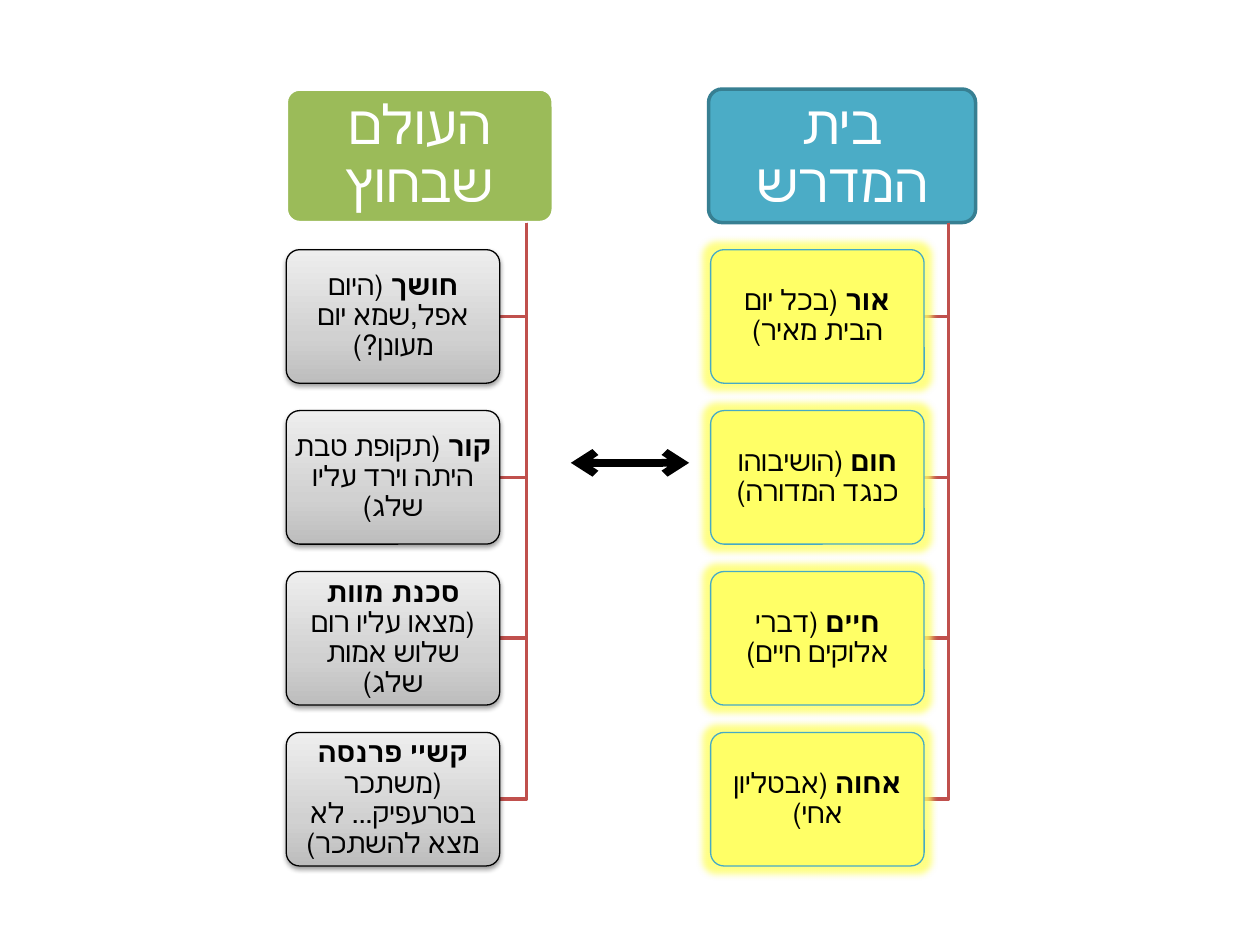
from lxml import etree
from pptx import Presentation
from pptx.dml.color import RGBColor
from pptx.enum.lang import MSO_LANGUAGE_ID
from pptx.enum.shapes import MSO_CONNECTOR, MSO_SHAPE
from pptx.enum.text import MSO_ANCHOR, PP_ALIGN
from pptx.oxml.ns import qn
from pptx.util import Pt

ROUNDED = MSO_SHAPE.ROUNDED_RECTANGLE
STRAIGHT = MSO_CONNECTOR.STRAIGHT
MIDDLE = MSO_ANCHOR.MIDDLE
CENTER = PP_ALIGN.CENTER
HEBREW = MSO_LANGUAGE_ID.HEBREW

BLACK = RGBColor(0x00, 0x00, 0x00)
WHITE = RGBColor(0xFF, 0xFF, 0xFF)
TEAL = RGBColor(0x4B, 0xAC, 0xC6)
DARK_TEAL = RGBColor(0x37, 0x7F, 0x92)
ITEM_TEAL = RGBColor(0x46, 0xAA, 0xC5)
GREEN = RGBColor(0x9B, 0xBB, 0x59)
YELLOW = RGBColor(0xFF, 0xFF, 0x66)
RED = RGBColor(0xC0, 0x50, 0x4D)
GRAYS = (
    (0, RGBColor(0xBD, 0xBD, 0xBD)),
    (35, RGBColor(0xD1, 0xD1, 0xD1)),
    (100, RGBColor(0xEE, 0xEE, 0xEE)),
)

GLOW = ("a:glow", {"rad": Pt(8)}, YELLOW, 80)
SHADOW = (
    "a:outerShdw",
    {"blurRad": Pt(3.1), "dist": Pt(1.6), "dir": 5400000, "rotWithShape": 0},
    BLACK,
    38,
)

HEADER_TOP, HEADER_W, BOX_H = 50.9, 152.6, 76.3
ITEM_TOP, ITEM_W, ITEM_STEP = 142.7, 122, 91.95

COLUMNS = (
    {
        "title": "בית המדרש",
        "header_left": 404.9, "item_left": 406.1, "trunk": 542.1,
        "header": {"fill": TEAL, "line": DARK_TEAL, "width": 2},
        "item": {"fill": YELLOW, "line": ITEM_TEAL, "width": 0.75, "effect": GLOW},
        "items": (
            ("אור", " (בכל יום הבית מאיר)"),
            ("חום", " (הושיבוהו כנגד המדורה)"),
            ("חיים", " (דברי אלוקים חיים)"),
            ("אחוה", " (אבטליון אחי)"),
        ),
    },
    {
        "title": "העולם שבחוץ",
        "header_left": 163.6, "item_left": 163.6, "trunk": 300.9,
        "header": {"fill": GREEN, "line": WHITE, "width": 2},
        "item": {"fill": GRAYS, "line": BLACK, "width": 0.75, "effect": SHADOW},
        "items": (
            ("חושך", " (היום אפל,שמא יום מעונן?)"),
            ("קור", " (תקופת טבת היתה וירד עליו שלג)"),
            ("סכנת מוות ", "(מצאו עליו רום שלוש אמות שלג)"),
            ("קשיי פרנסה ", "(משתכר בטרעפיק... לא מצא להשתכר)"),
        ),
    },
)


def add_xml(parent, tag, values):
    return etree.SubElement(parent, qn(tag), {k: str(v) for k, v in values.items()})


def set_all(target, values):
    for name, value in values.items():
        setattr(target, name, value)


class Deck:
    font = "Calibri"

    def __init__(self, width, height):
        self.prs = Presentation()
        set_all(self.prs, {"slide_width": Pt(width), "slide_height": Pt(height)})
        self.s = self.prs.slides.add_slide(self.prs.slide_layouts[6])

    def outline(self, sp, color, width):
        sp.line.color.rgb = color
        sp.line.width = Pt(width)

    def paint(self, sp, fill):
        if isinstance(fill, RGBColor):
            sp.fill.solid()
            sp.fill.fore_color.rgb = fill
            return
        sp.fill.gradient()
        sp.fill.gradient_angle = 90
        stops = sp._element.spPr.find(".//" + qn("a:gsLst"))
        for stop in list(stops):
            stops.remove(stop)
        for pos, color in fill:
            stop = add_xml(stops, "a:gs", {"pos": pos * 1000})
            add_xml(stop, "a:srgbClr", {"val": color})

    def effect(self, sp, tag, values, color, alpha):
        effects = sp._element.spPr.find(qn("a:effectLst"))
        clr = add_xml(add_xml(effects, tag, values), "a:srgbClr", {"val": color})
        add_xml(clr, "a:alpha", {"val": alpha * 1000})

    def text(self, sp, runs, size, color, inset):
        tf = sp.text_frame
        set_all(tf, {
            "word_wrap": True, "vertical_anchor": MIDDLE,
            "margin_left": Pt(inset), "margin_right": Pt(inset),
            "margin_top": Pt(inset * 2 / 3), "margin_bottom": Pt(inset * 2 / 3),
        })
        p = tf.paragraphs[0]
        set_all(p, {"alignment": CENTER, "line_spacing": 0.9})
        p._p.get_or_add_pPr().set("rtl", "1")
        for content, bold in runs:
            r = p.add_run()
            r.text = content
            set_all(r.font, {
                "name": self.font, "size": Pt(size), "bold": bold,
                "language_id": HEBREW,
            })
            r.font.color.rgb = color

    def box(self, left, top, width, style):
        sp = self.s.shapes.add_shape(ROUNDED, Pt(left), Pt(top), Pt(width), Pt(BOX_H))
        sp.adjustments[0] = 0.1
        self.paint(sp, style["fill"])
        self.outline(sp, style["line"], style["width"])
        sp.shadow.inherit = False
        if "effect" in style:
            self.effect(sp, *style["effect"])
        return sp

    def elbow(self, x, top, end_x, end_y):
        fb = self.s.shapes.build_freeform(Pt(x), Pt(top))
        fb.add_line_segments([(Pt(x), Pt(end_y)), (Pt(end_x), Pt(end_y))], close=False)
        sp = fb.convert_to_shape()
        sp.fill.background()
        self.outline(sp, RED, 2)
        sp.shadow.inherit = False

    def double_arrow(self, x1, x2, y):
        sp = self.s.shapes.add_connector(STRAIGHT, Pt(x1), Pt(y), Pt(x2), Pt(y))
        self.outline(sp, BLACK, 4.5)
        for end in ("a:headEnd", "a:tailEnd"):
            add_xml(sp.line._get_or_add_ln(), end, {"type": "arrow"})
        add_xml(sp._element.spPr, "a:effectLst", {})

    def column(self, col):
        header = self.box(col["header_left"], HEADER_TOP, HEADER_W, col["header"])
        self.text(header, [(col["title"], False)], 31, WHITE, 4.32)
        for i, (term, quote) in enumerate(col["items"]):
            left, top = col["item_left"], ITEM_TOP + i * ITEM_STEP
            self.elbow(col["trunk"], HEADER_TOP + BOX_H, left + ITEM_W, top + BOX_H / 2)
            item = self.box(left, top, ITEM_W, col["item"])
            self.text(item, [(term, True), (quote, False)], 16, BLACK, 2.16)


def main():
    deck = Deck(720, 540)
    for col in COLUMNS:
        deck.column(col)
    deck.double_arrow(326.2, 393.8, 264.5)
    deck.prs.save("out.pptx")


if __name__ == "__main__":
    main()
